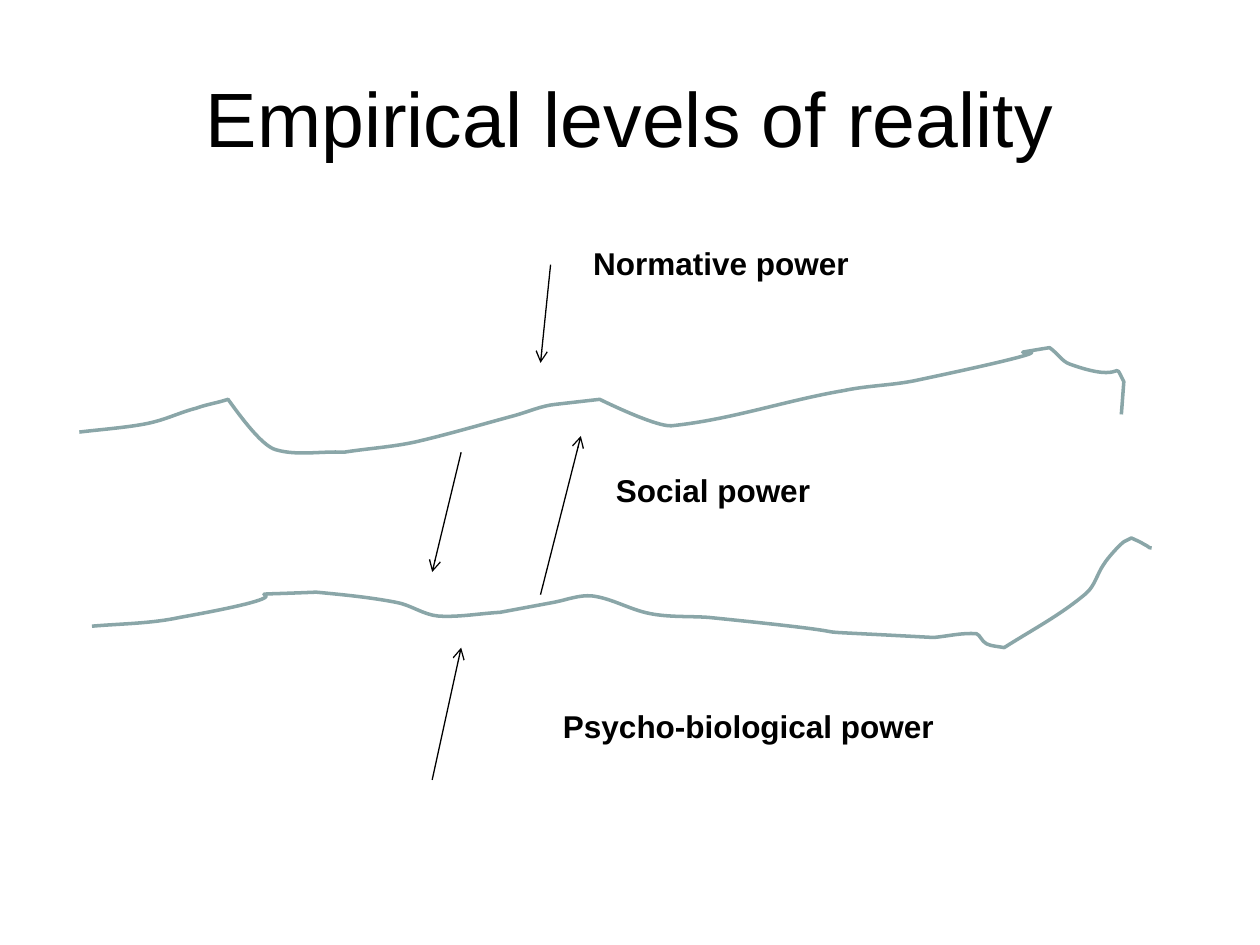
import pptx
import pptx.dml.color
import pptx.enum.shapes
import pptx.enum.text
import pptx.oxml.ns
import pptx.oxml.xmlchemy
import pptx.util

COLORS = {"ink": "000000", "boundary": "8AA6A8", "paper": "FFFFFF"}
COLUMNS, ROWS = 100, 75

UPPER_BOUNDARY = [
    [(6.3, 34.3)],
    [(7.9, 34.1), (10.7, 33.9), (12.2, 33.5)],
    [(13.4, 33.2), (14.4, 32.7), (15.6, 32.4)],
    [(16.4, 32.1), (17.2, 32), (18.1, 31.7)],
    [(18.7, 32.5), (20.7, 35.4), (21.9, 35.7)],
    [(23.6, 36.2), (25.5, 35.8), (27.3, 35.9)],
    [(29.2, 35.6), (31, 35.5), (32.9, 35.1)],
    [(35.5, 34.5), (38.2, 33.7), (40.8, 33)],
    [(41.9, 32.7), (43, 32.2), (44.1, 32.1)],
    [(47.6, 31.7)],
    [(48, 31.9), (52.1, 33.9), (53.3, 33.8)],
    [(58.1, 33.3), (62.3, 31.8), (67, 31)],
    [(68.9, 30.6), (70.8, 30.6), (72.7, 30.2)],
    [(89.7, 26.6), (76.5, 28.7), (83.3, 27.6)],
    [(83.9, 28), (84.3, 28.7), (84.9, 28.9)],
    [(89.6, 30.6), (88.2, 28.3), (89.2, 30.3)],
    [(89, 32.9)],
]
LOWER_BOUNDARY = [
    [(7.3, 49.7)],
    [(9.6, 49.5), (12, 49.5), (14.3, 49)],
    [(27.7, 46.6), (15.4, 47.4), (25.1, 47)],
    [(27.2, 47.2), (29.3, 47.4), (31.4, 47.8)],
    [(32.6, 48), (33.6, 48.8), (34.8, 48.9)],
    [(36.4, 49), (38, 48.7), (39.7, 48.6)],
    [(44, 47.8)],
    [(45, 47.6), (46, 47.2), (47, 47.3)],
    [(48.6, 47.5), (50, 48.4), (51.6, 48.7)],
    [(53.1, 49), (54.7, 48.9), (56.2, 49)],
    [(73.1, 50.7), (59.2, 49.8), (74.1, 50.6)],
    [(75.2, 50.5), (76.4, 50.2), (77.5, 50.3)],
    [(77.8, 50.4), (77.9, 50.9), (78.3, 51.1)],
    [(78.7, 51.3), (79.2, 51.3), (79.7, 51.4)],
    [(81.9, 50), (84.2, 48.8), (86.2, 47.1)],
    [(86.9, 46.5), (87.1, 45.5), (87.6, 44.8)],
    [(87.9, 44.3), (88.8, 43.3), (89.2, 43)],
    [(89.4, 42.9), (89.6, 42.8), (89.8, 42.7)],
    [(90.2, 42.9), (90.5, 43), (90.8, 43.2)],
    [(91.4, 43.5), (91.1, 43.5), (91.4, 43.5)],
]
INFLUENCES = [
    ((43.7, 21), (42.9, 28.8)),
    ((36.6, 35.9), (34.3, 45.4)),
    ((42.9, 47.2), (46.1, 34.6)),
    ((34.3, 61.9), (36.6, 51.4)),
]
POWERS = [
    ("Psycho-biological power", 43.7, 55.6),
    ("Normative power", 46.1, 18.9),
    ("Social power", 47.9, 36.9),
]


class LevelsSlide:
    """Style and current slide, measured on a grid of columns and rows."""

    font = "Arial"

    def __init__(self, deck):
        self.column = deck.slide_width / COLUMNS
        self.row = deck.slide_height / ROWS
        self.slide = deck.slides.add_slide(deck.slide_layouts[6])
        backdrop = self.slide.background.fill
        backdrop.solid()
        backdrop.fore_color.rgb = self.color("paper")

    def color(self, name):
        return pptx.dml.color.RGBColor.from_string(COLORS[name])

    def place(self, column, row):
        return round(column * self.column), round(row * self.row)

    def stroke(self, line, color, width):
        line.color.rgb = self.color(color)
        line.width = pptx.util.Pt(width)

    def text(self, wording, column, row, columns, rows, size, bold=False, centred=False):
        box = self.slide.shapes.add_textbox(*self.place(column, row), *self.place(columns, rows))
        frame = box.text_frame
        frame.word_wrap = True
        if centred:
            frame.vertical_anchor = pptx.enum.text.MSO_ANCHOR.MIDDLE
            frame.paragraphs[0].alignment = pptx.enum.text.PP_ALIGN.CENTER
        else:
            frame.auto_size = pptx.enum.text.MSO_AUTO_SIZE.SHAPE_TO_FIT_TEXT
        run = frame.paragraphs[0].add_run()
        run.text = wording
        run.font.name = self.font
        run.font.size = pptx.util.Pt(size)
        run.font.bold = bold
        run.font.color.rgb = self.color("ink")

    def curve(self, segments):
        start, *others = [self.place(*point) for segment in segments for point in segment]
        builder = self.slide.shapes.build_freeform(*start)
        builder.add_line_segments(others, close=False)
        boundary = builder.convert_to_shape()
        boundary.shadow.inherit = False
        boundary.fill.background()
        self.stroke(boundary.line, "boundary", 2)
        qn = pptx.oxml.ns.qn
        steps = iter(list(boundary.element.iter(qn("a:lnTo"))))
        for segment in segments[1:]:
            first, *rest = [next(steps) for _ in segment]
            if rest:
                first.tag = qn("a:cubicBezTo")
            for step in rest:
                first.append(step[0])
                step.getparent().remove(step)

    def arrow(self, start, end):
        straight = pptx.enum.shapes.MSO_CONNECTOR.STRAIGHT
        influence = self.slide.shapes.add_connector(straight, *self.place(*start), *self.place(*end))
        self.stroke(influence.line, "ink", 0.75)
        head = pptx.oxml.xmlchemy.OxmlElement("a:tailEnd")
        head.set("type", "arrow")
        influence.line._get_or_add_ln().append(head)
        influence.element.spPr.append(pptx.oxml.xmlchemy.OxmlElement("a:effectLst"))


def main():
    deck = pptx.Presentation()
    deck.slide_width = pptx.util.Inches(10)
    deck.slide_height = pptx.util.Inches(7.5)
    levels = LevelsSlide(deck)
    levels.text("Empirical levels of reality", 5, 3, 90, 12.5, 44, centred=True)
    for boundary in (UPPER_BOUNDARY, LOWER_BOUNDARY):
        levels.curve(boundary)
    for start, end in INFLUENCES:
        levels.arrow(start, end)
    for power, column, row in POWERS:
        levels.text(power, column, row, 38.6, 4, 18, bold=True)
    deck.save("out.pptx")


if __name__ == "__main__":
    main()
